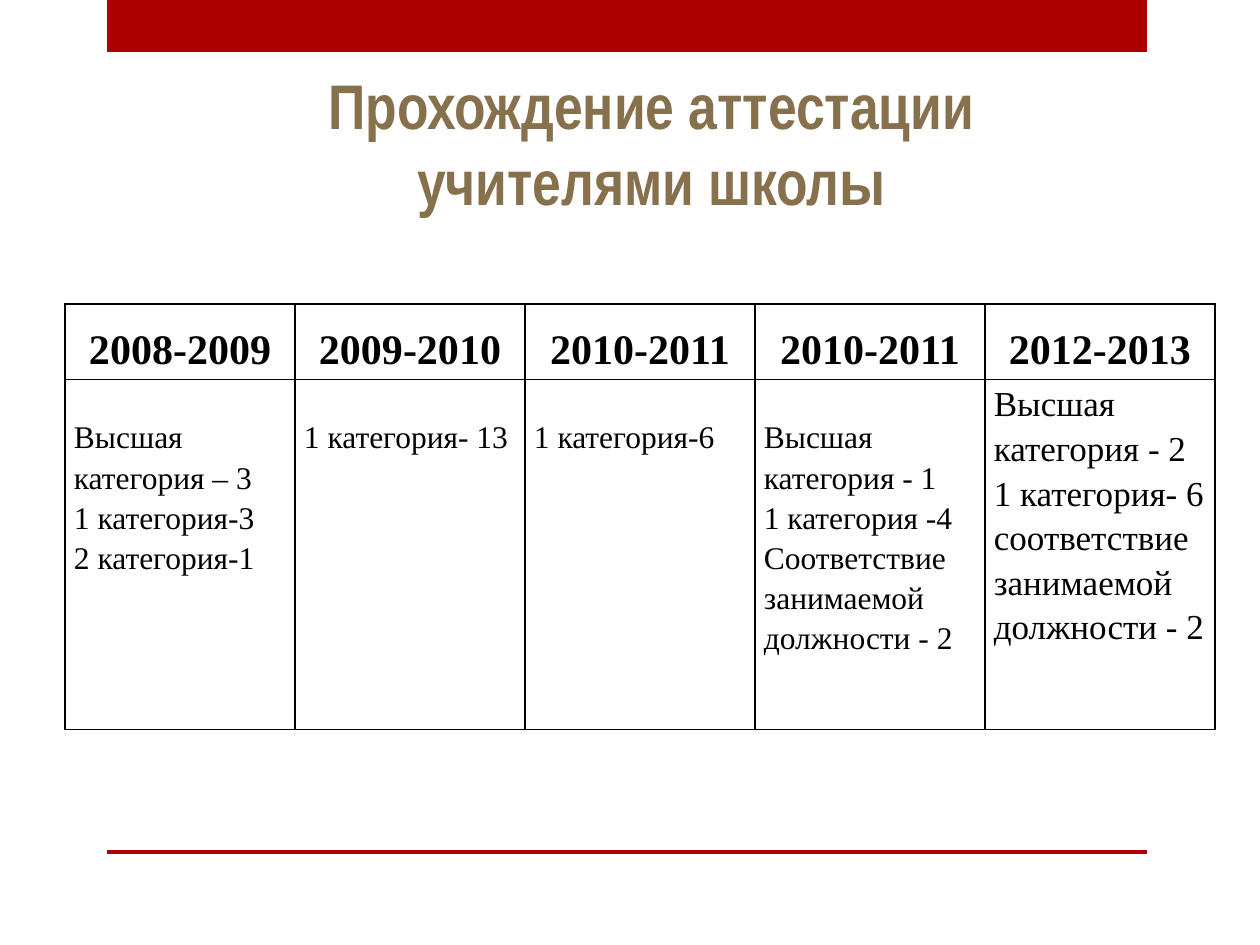
from lxml import etree
from pptx import Presentation
from pptx import util as u
from pptx.dml.color import RGBColor
from pptx.enum import shapes, text
from pptx.oxml.ns import qn

SCALE = 914400 / 126
RED, BROWN, BLACK = "AD0101", "87714D", "000000"
TITLE = {"name": "Arial Narrow", "size": u.Pt(36), "bold": True}
HEADER = {"name": "Times New Roman", "size": u.Pt(24), "bold": True}
BODY = {"name": "Times New Roman", "size": u.Pt(18), "bold": False}
LARGE = {**BODY, "size": u.Pt(20)}
CENTER, LEFT = text.PP_ALIGN.CENTER, text.PP_ALIGN.LEFT

YEARS = ["2008-2009", "2009-2010", "2010-2011", "2010-2011", "2012-2013"]
RESULTS = [
    ["Высшая категория – 3", "1 категория-3", "2 категория-1"],
    ["1 категория- 13"],
    ["1 категория-6"],
    ["Высшая категория - 1", "1 категория -4", "Соответствие занимаемой должности - 2"],
    ["Высшая категория - 2", "1 категория- 6", "соответствие занимаемой должности - 2"],
]


def px(length):
    return u.Emu(round(length * SCALE))


def color(value):
    return RGBColor.from_string(value)


def assign(target, values):
    for name, value in values.items():
        setattr(target, name, value)


class SlideBuilder:
    """Draws styled elements on the current slide."""

    def __init__(self, page):
        self.page = page

    def bar(self, *place):
        shape = self.page.shapes.add_shape(shapes.MSO_SHAPE.RECTANGLE, *map(px, place))
        shape.shadow.inherit = False
        shape.fill.solid()
        shape.fill.fore_color.rgb = color(RED)
        shape.line.fill.background()

    def paragraphs(self, frame, lines, font, ink, align, spacing):
        frame.word_wrap = True
        for index, line in enumerate(lines):
            para = frame.add_paragraph() if index else frame.paragraphs[0]
            assign(para, {"alignment": align, "line_spacing": spacing})
            span = para.add_run()
            span.text = line
            assign(span.font, font)
            span.font.color.rgb = color(ink)

    def title(self, words, *place):
        box = self.page.shapes.add_textbox(*map(px, place))
        box.text_frame.vertical_anchor = text.MSO_ANCHOR.BOTTOM
        self.paragraphs(box.text_frame, [words], TITLE, BROWN, CENTER, 1.0)

    def borders(self, cell):
        properties = cell._tc.get_or_add_tcPr()
        for index, side in enumerate(("lnL", "lnR", "lnT", "lnB")):
            line = etree.Element(qn(f"a:{side}"), w=str(u.Pt(1)))
            fill = etree.SubElement(line, qn("a:solidFill"))
            etree.SubElement(fill, qn("a:srgbClr"), val=BLACK)
            properties.insert(index, line)

    def cell(self, cell, lines, font, align, spacing, top):
        cell.fill.background()
        assign(cell, {"margin_left": px(9), "margin_right": px(9),
                      "margin_top": px(top), "margin_bottom": 0})
        self.borders(cell)
        self.paragraphs(cell.text_frame, lines, font, BLACK, align, spacing)

    def table(self, left, top, column_width, row_heights):
        count = len(YEARS)
        frame = self.page.shapes.add_table(
            len(row_heights), count, px(left), px(top),
            px(column_width * count), px(sum(row_heights)))
        grid = frame.table
        assign(grid, {"first_row": False, "horz_banding": False})
        for row, height in zip(grid.rows, row_heights):
            row.height = px(height)
        for index, (year, result) in enumerate(zip(YEARS, RESULTS)):
            grid.columns[index].width = px(column_width)
            self.cell(grid.cell(0, index), [year], HEADER, CENTER, 1.5, 0)
            font, inset = (LARGE, 0) if index == count - 1 else (BODY, 36)
            self.cell(grid.cell(1, index), result, font, LEFT, 1.15, inset)


def main():
    deck = Presentation()
    assign(deck, {"slide_width": px(1260), "slide_height": px(945)})
    slide = SlideBuilder(deck.slides.add_slide(deck.slide_layouts[6]))
    slide.bar(107, 0, 1040, 52)
    slide.bar(107, 850, 1040, 4)
    slide.title("Прохождение аттестации учителями школы", 184, 65, 935, 159)
    slide.table(65, 304, 230, [70, 350])
    deck.save("out.pptx")


if __name__ == "__main__":
    main()
